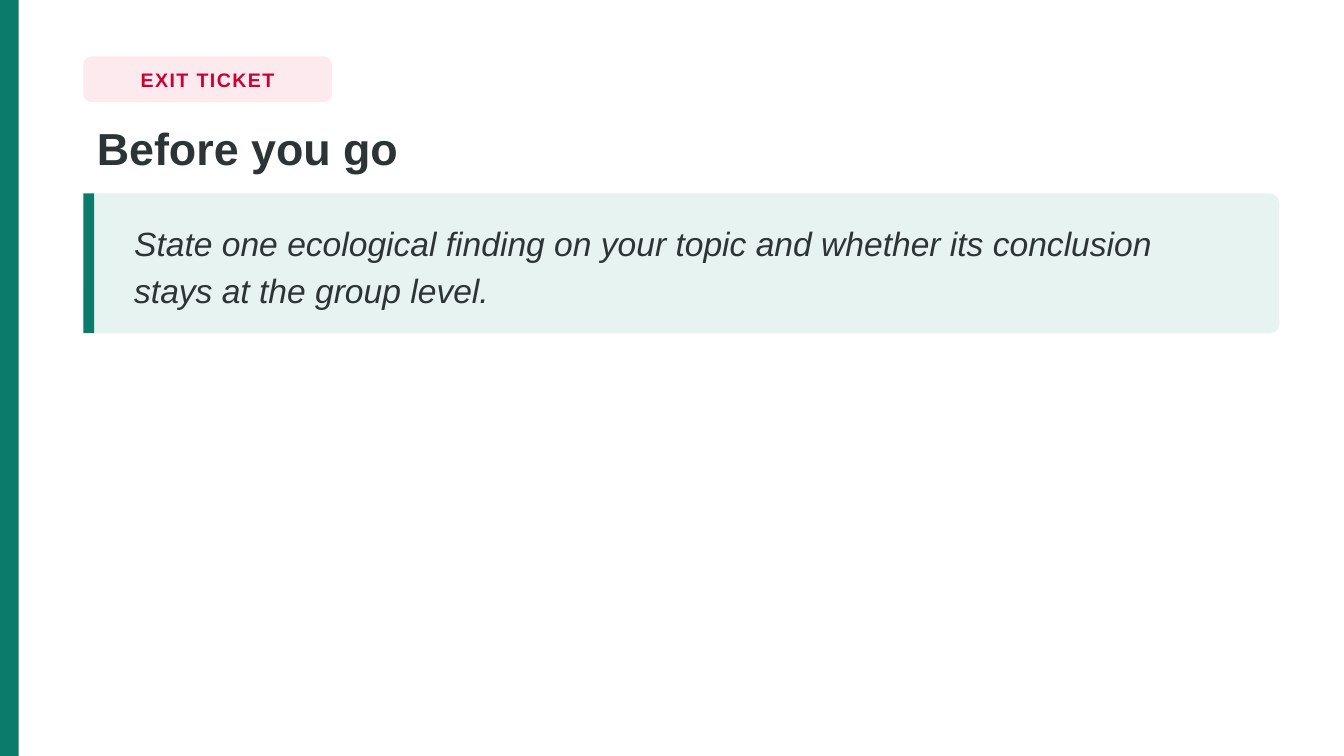
from dataclasses import dataclass

from pptx import Presentation
from pptx.dml.color import RGBColor
from pptx.enum.shapes import MSO_SHAPE
from pptx.enum.text import MSO_ANCHOR, MSO_AUTO_SIZE, PP_ALIGN
from pptx.shapes.autoshape import Shape
from pptx.slide import Slide
from pptx.util import Inches, Pt

# Grid of square cells: 100 columns across a 16:9 slide
COLUMNS, ROWS = 100, 56.25
CELL = Inches(10) / COLUMNS
MARGIN, CONTENT_WIDTH = 6.2, 89
CORNER = 0.6

FONT = "Arial"
GREEN, MINT = "0B7B6B", "E6F3F0"
CRIMSON, BLUSH = "CC0033", "FDEAEF"
INK = "2D3436"


@dataclass(frozen=True)
class Box:
    column: float
    row: float
    width: float
    height: float

    def lengths(self) -> tuple[int, ...]:
        cells = (self.column, self.row, self.width, self.height)
        return tuple(round(cell * CELL) for cell in cells)


@dataclass(frozen=True)
class TextStyle:
    size: float
    color: str
    bold: bool = False
    italic: bool = False
    tracking: float = 0
    line_spacing: float = 1
    alignment: PP_ALIGN = PP_ALIGN.LEFT
    anchor: MSO_ANCHOR = MSO_ANCHOR.MIDDLE
    wrap: bool = True


def rgb(color: str) -> RGBColor:
    return RGBColor.from_string(color)


def add_panel(slide: Slide, box: Box, color: str, corner: float = 0) -> None:
    kind = MSO_SHAPE.ROUNDED_RECTANGLE if corner else MSO_SHAPE.RECTANGLE
    shape = slide.shapes.add_shape(kind, *box.lengths())
    if corner:
        shape.adjustments[0] = corner / min(box.width, box.height)
    shape.shadow.inherit = False
    shape.fill.solid()
    shape.fill.fore_color.rgb = rgb(color)
    shape.line.fill.background()


def write_text(shape: Shape, text: str, style: TextStyle) -> None:
    frame = shape.text_frame
    frame.auto_size = MSO_AUTO_SIZE.NONE
    frame.word_wrap = style.wrap
    frame.vertical_anchor = style.anchor
    paragraph = frame.paragraphs[0]
    paragraph.alignment = style.alignment
    paragraph.line_spacing = style.line_spacing
    paragraph.space_before = Pt(0)
    run = paragraph.add_run()
    run.text = text
    font = run.font
    font.name, font.size = FONT, Pt(style.size)
    font.bold, font.italic = style.bold, style.italic
    font.color.rgb = rgb(style.color)
    if style.tracking:
        run._r.get_or_add_rPr().set("spc", str(round(style.tracking * 100)))


def add_text(slide: Slide, box: Box, text: str, style: TextStyle) -> None:
    write_text(slide.shapes.add_textbox(*box.lengths()), text, style)


def place_title(slide: Slide, box: Box, text: str, style: TextStyle) -> None:
    title = slide.shapes.title
    title.left, title.top, title.width, title.height = box.lengths()
    write_text(title, text, style)


def main() -> None:
    presentation = Presentation()
    presentation.slide_width = round(COLUMNS * CELL)
    presentation.slide_height = round(ROWS * CELL)
    slide = presentation.slides.add_slide(presentation.slide_layouts[5])
    slide.background.fill.solid()
    slide.background.fill.fore_color.rgb = rgb("FFFFFF")

    # Accent strip down the left edge
    add_panel(slide, Box(0, 0, 1.4, ROWS), GREEN)

    # Label
    label = Box(MARGIN, 4.2, 18.5, 3.4)
    add_panel(slide, label, BLUSH, CORNER)
    add_text(slide, label, "EXIT TICKET",
             TextStyle(10.5, CRIMSON, bold=True, tracking=0.8,
                       alignment=PP_ALIGN.CENTER, wrap=False))

    # Title
    place_title(slide, Box(MARGIN, 8.4, CONTENT_WIDTH, 5.6), "Before you go",
                TextStyle(24, INK, bold=True, line_spacing=1.02,
                          anchor=MSO_ANCHOR.TOP))

    # Prompt card with its accent bar
    card = Box(MARGIN, 14.4, CONTENT_WIDTH, 10.4)
    add_panel(slide, card, MINT, CORNER + 0.1)
    add_panel(slide, Box(card.column, card.row, 0.8, card.height), GREEN)
    add_text(slide,
             Box(card.column + 2.8, card.row + 0.5,
                 card.width - 5.5, card.height - 1),
             "State one ecological finding on your topic and whether "
             "its conclusion stays at the group level.",
             TextStyle(18, INK, italic=True, line_spacing=1.16))

    presentation.save("out.pptx")


if __name__ == "__main__":
    main()
